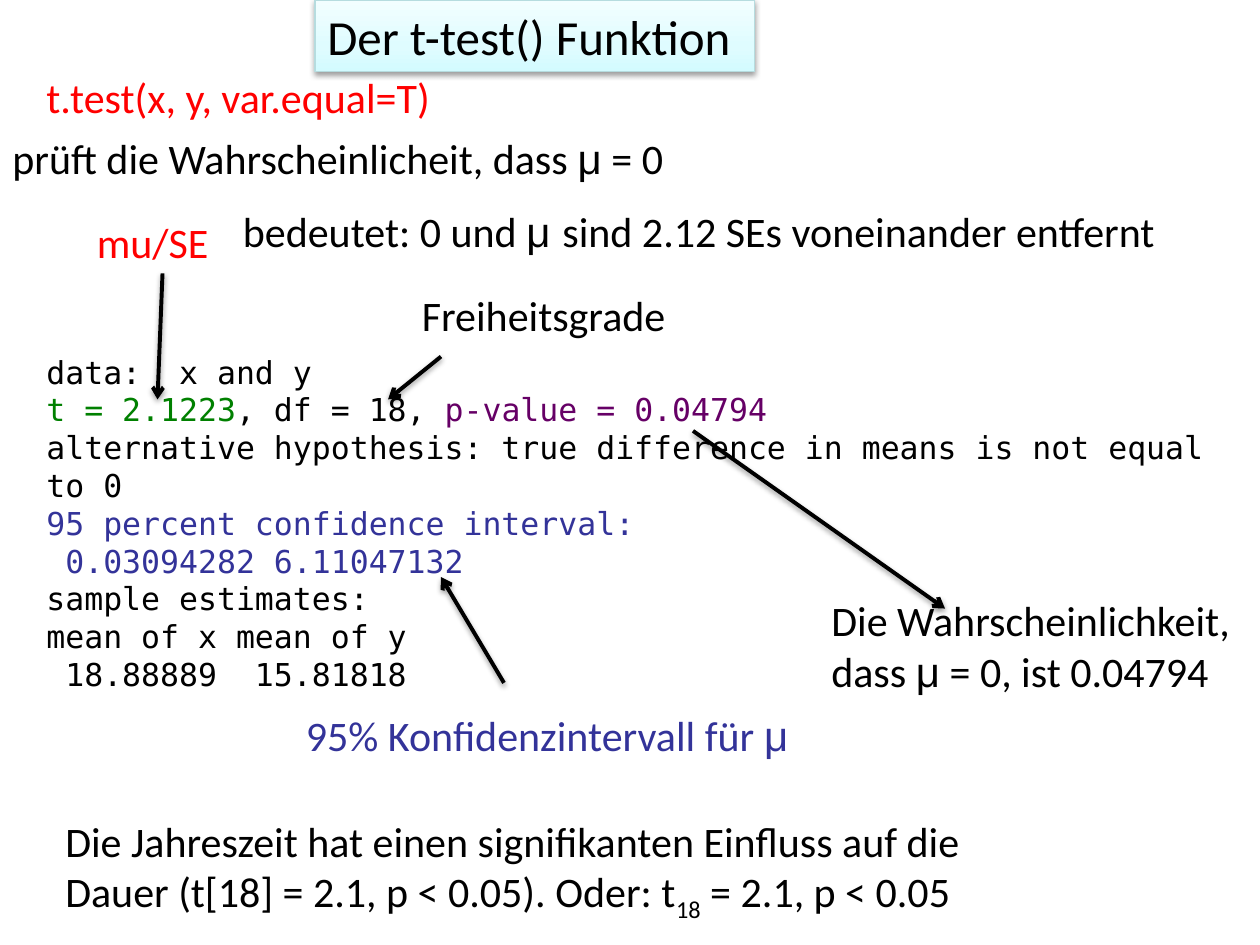
from lxml import etree
from pptx import Presentation
from pptx.dml.color import RGBColor
from pptx.enum.shapes import MSO_CONNECTOR, MSO_SHAPE
from pptx.enum.text import MSO_ANCHOR, PP_ALIGN
from pptx.oxml import parse_xml
from pptx.oxml.ns import nsdecls, qn
from pptx.util import Inches, Pt

STRAIGHT = MSO_CONNECTOR.STRAIGHT
RECTANGLE = MSO_SHAPE.RECTANGLE
TOP = MSO_ANCHOR.TOP
LEFT = PP_ALIGN.LEFT

COLORS = {
    "black": "000000", "red": "FF0000", "green": "008000",
    "purple": "660066", "blue": "333399", "title_line": "B6DCDF",
}
TITLE_STOPS = [(0, "D3FBFF"), (35, "DFFCFF"), (100, "F2FEFF")]
SANS, MONO, GREEK = "Calibri", "DejaVu Sans Mono", "Arial"

# Content: a paragraph is (color, runs); a run is text or (text, option)
TITLE = ("black", ["Der t-test() Funktion"])
TITLE_BOX = (2.5, 0, 3.49, 0.57)

OUTPUT_BOX = (0.27, 2.75, 9.73, 2.83)
TEST_OUTPUT = [
    ("black", ["data:  x and y"]),
    ("black", [("t = 2.1223", "green"), ", df = 18, ",
               ("p-value = 0.04794", "purple")]),
    ("black", ["alternative hypothesis: true difference in means "
               "is not equal to 0"]),
    ("blue", ["95 percent confidence interval:"]),
    ("blue", [" 0.03094282 6.11047132"]),
    ("black", ["sample estimates:"]),
    ("black", ["mean of x mean of y"]),
    ("black", [" 18.88889  15.81818"]),
]

# (left, top, width, height), wraps, paragraph
NOTES = [
    ((0.27, 0.52, 3.28, 0.5), False, ("red", ["t.test(x, y, var.equal=T)"])),
    ((0, 1, 6.75, 0.5), True,
     ("black", ["prüft die Wahrscheinlicheit, dass ", ("μ", "greek"), " = 0"])),
    ((0.67, 1.67, 1.25, 0.5), True, ("red", ["mu/SE"])),
    ((1.83, 1.58, 7.67, 0.5), True,
     ("black", ["bedeutet: 0 und ", ("μ ", "greek"),
                "sind 2.12 SEs voneinander entfernt"])),
    ((6.5, 4.67, 3.5, 0.91), True,
     ("black", ["Die Wahrscheinlichkeit, dass ", ("μ", "greek"),
                " = 0, ist 0.04794"])),
    ((2.33, 5.58, 4.14, 0.5), False,
     ("blue", ["95% Konfidenzintervall für ", ("μ", "greek")])),
    ((3.25, 2.25, 2.83, 0.5), True, ("black", ["Freiheitsgrade"])),
    ((0.42, 6.42, 8, 0.91), True,
     ("black", ["Die Jahreszeit hat einen signifikanten Einfluss auf die "
                "Dauer (t[18] = 2.1, p < 0.05). Oder: t",
                ("18", "sub"), " = 2.1, p < 0.05"])),
]

# Start x, y and end x, y
ARROWS = [
    (1.29, 2.17, 1.25, 3.17),
    (5.5, 3.42, 7.5, 4.83),
    (4, 5.42, 3.5, 4.58),
    (3.5, 2.83, 3.08, 3.17),
]


def rgb(name):
    return RGBColor.from_string(COLORS[name])


def add_shadow(shape):
    spPr = shape._element.spPr
    for old in spPr.findall(qn("a:effectLst")):
        spPr.remove(old)
    spPr.append(parse_xml(
        f'<a:effectLst {nsdecls("a")}><a:outerShdw blurRad="40000" '
        'dist="20000" dir="5400000" rotWithShape="0"><a:srgbClr val="000000">'
        '<a:alpha val="38000"/></a:srgbClr></a:outerShdw></a:effectLst>'))


def write_text(shape, paragraphs, font, size, wrap=True):
    tf = shape.text_frame
    tf.word_wrap = wrap
    tf.vertical_anchor = TOP
    for i, (color, runs) in enumerate(paragraphs):
        p = tf.add_paragraph() if i else tf.paragraphs[0]
        p.alignment = LEFT
        p.font.name, p.font.size = font, Pt(size)
        p.font.color.rgb = rgb(color)
        for run in runs:
            text, option = (run, None) if isinstance(run, str) else run
            r = p.add_run()
            r.text = text
            if option == "greek":
                r.font.name = GREEK
            elif option == "sub":
                r._r.get_or_add_rPr().set("baseline", "-25000")
            elif option:
                r.font.color.rgb = rgb(option)


prs = Presentation()
prs.slide_width, prs.slide_height = Inches(10), Inches(7.5)
s = prs.slides.add_slide(prs.slide_layouts[6])

# Title with a three-stop gradient
sp = s.shapes.add_shape(RECTANGLE, *map(Inches, TITLE_BOX))
stops = "".join(f'<a:gs pos="{pos * 1000}"><a:srgbClr val="{color}"/></a:gs>'
                for pos, color in TITLE_STOPS)
sp._element.spPr.insert(2, parse_xml(
    f'<a:gradFill {nsdecls("a")} rotWithShape="1"><a:gsLst>{stops}</a:gsLst>'
    '<a:lin ang="16200000" scaled="0"/></a:gradFill>'))
sp.line.color.rgb = rgb("title_line")
sp.line.width = Pt(0.75)
add_shadow(sp)
write_text(sp, [TITLE], SANS, 28)

# Test output and the notes around it
sp = s.shapes.add_textbox(*map(Inches, OUTPUT_BOX))
write_text(sp, TEST_OUTPUT, MONO, 18)
for box, wrap, paragraph in NOTES:
    sp = s.shapes.add_textbox(*map(Inches, box))
    write_text(sp, [paragraph], SANS, 24, wrap)

# Arrows between notes and output
for ends in ARROWS:
    arrow = s.shapes.add_connector(STRAIGHT, *map(Inches, ends))
    arrow.line.color.rgb = rgb("black")
    arrow.line.width = Pt(2.25)
    etree.SubElement(arrow.line._get_or_add_ln(), qn("a:tailEnd"), type="arrow")
    add_shadow(arrow)

prs.save("out.pptx")
